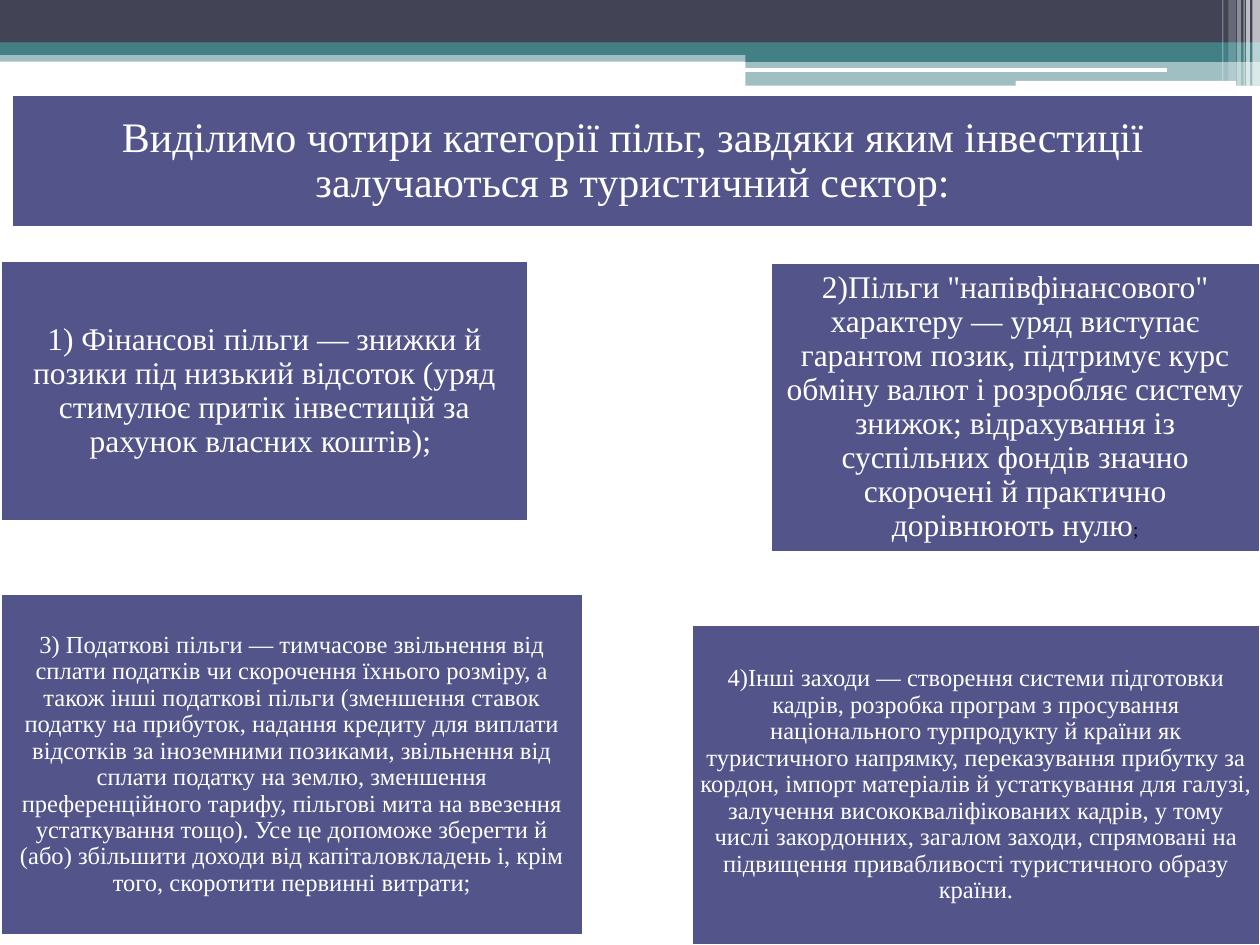
from lxml.etree import SubElement
from pptx import Presentation
from pptx.dml.color import RGBColor
from pptx.enum.shapes import MSO_SHAPE as Shape
from pptx.enum.text import MSO_ANCHOR as Anchor, MSO_AUTO_SIZE as AutoSize, PP_ALIGN as Align
from pptx.oxml.ns import qn
from pptx.util import Pt

COLORS = {"slate": "424456", "teal": "438086", "violet": "53548A",
          "white": "FFFFFF", "black": "000000"}
FONT = "Times New Roman"

# left, top, width, height, colour, opacity in percent
BANDS = [
    (0, 28.8, 720, 6.48, "teal", 50),
    (0, 0, 720, 24.48, "slate", 100),
    (0, 24.2, 720, 7.2, "teal", 100),
    (426, 28.2, 294, 7.2, "teal", 100),
    (426, 34.8, 294, 14.1, "teal", 50),
]
ROUNDED_BARS = [
    (425.6, 39, 241.2, 2.16, "white", 100),
    (580.4, 46.2, 126, 2.88, "white", 100),
]
# left, width, height, opacity in percent
STRIPES = [
    (715.7, 4.3, 49, 65),
    (712.1, 2.16, 49, 65),
    (710.6, 0.72, 49, 60),
    (707, 2.16, 49, 40),
    (702, 4.32, 46.1, 20),
    (698.4, 0.72, 46.1, 30),
]

TITLE = "Виділимо чотири категорії пільг, завдяки яким інвестиції залучаються в туристичний сектор:"
# frame, inset, spans of (text, size, colour)
BENEFITS = [
    ((0.4, 149, 301.4, 149), 5, [
        ("1) Фінансові пільги — знижки й позики під низький відсоток (уряд стимулює "
         "притік інвестицій за рахунок власних коштів); ", 18, "white")]),
    ((440.2, 149.9, 279.8, 165.6), 5, [
        ("2)Пільги \"напівфінансового\" характеру — уряд виступає гарантом позик, підтримує "
         "курс обміну валют і розробляє систему знижок; відрахування із суспільних фондів "
         "значно скорочені й практично дорівнюють нулю", 18, "white"),
        (";", 11, "black")]),
    ((0.2, 339.2, 333.2, 195.1), 4.2, [
        ("3) Податкові пільги — тимчасове звільнення від сплати податків чи скорочення їхнього "
         "розміру, а також інші податкові пільги (зменшення ставок податку на прибуток, надання "
         "кредиту для виплати відсотків за іноземними позиками, звільнення від сплати податку на "
         "землю, зменшення преференційного тарифу, пільгові мита на ввезення устаткування тощо). "
         "Усе це допоможе зберегти й (або) збільшити доходи від капіталовкладень і, крім того, "
         "скоротити первинні витрати;", 14, "white")]),
    ((395.4, 357.1, 324.6, 182.9), 4.2, [
        ("4)Інші заходи — створення системи підготовки кадрів, розробка програм з просування "
         "національного турпродукту й країни як туристичного напрямку, переказування прибутку за "
         "кордон, імпорт матеріалів й устаткування для галузі, залучення висококваліфікованих "
         "кадрів, у тому числі закордонних, загалом заходи, спрямовані на підвищення "
         "привабливості туристичного образу країни.", 14, "white")]),
]


def color(name):
    return RGBColor.from_string(COLORS[name])


def paint(box, fill, opacity=100):
    box.fill.solid()
    box.fill.fore_color.rgb = color(fill)
    if opacity < 100:
        tint = box._element.spPr.find(qn("a:solidFill"))[0]
        SubElement(tint, qn("a:alpha"), val=str(opacity * 1000))


def add_bar(page, kind, left, top, width, height, fill, opacity):
    bar = page.shapes.add_shape(kind, Pt(left), Pt(top), Pt(width), Pt(height))
    bar.shadow.inherit = False
    bar.line.fill.background()
    paint(bar, fill, opacity)


def add_banner(page):
    for band in BANDS:
        add_bar(page, Shape.RECTANGLE, *band)
    for bar in ROUNDED_BARS:
        add_bar(page, Shape.ROUNDED_RECTANGLE, *bar)
    for left, width, height, opacity in STRIPES:
        add_bar(page, Shape.RECTANGLE, left, 0, width, height, "white", opacity)


def format_panel(box, inset, spans):
    """Give a shape or placeholder the violet panel look and its centred text."""
    paint(box, "violet")
    box.line.color.rgb = color("white")
    box.line.width = Pt(1.5)
    frame = box.text_frame
    frame.word_wrap = True
    frame.auto_size = AutoSize.NONE
    frame.vertical_anchor = Anchor.MIDDLE
    frame.margin_left = frame.margin_right = Pt(inset)
    frame.margin_top = frame.margin_bottom = Pt(inset)
    para = frame.paragraphs[0]
    para.alignment = Align.CENTER
    para.line_spacing = 0.9
    for text, size, tone in spans:
        span = para.add_run()
        span.text = text
        span.font.name = FONT
        span.font.size = Pt(size)
        span.font.color.rgb = color(tone)


def add_title(page):
    title = page.shapes.title
    title.left, title.top, title.width, title.height = Pt(6.6), Pt(54), Pt(709.8), Pt(76.2)
    format_panel(title, 7.2, [(TITLE, 24, "white")])


def add_benefit(page, frame, inset, spans):
    box = page.shapes.add_shape(Shape.RECTANGLE, *map(Pt, frame))
    box.shadow.inherit = False
    format_panel(box, inset, spans)


def main():
    deck = Presentation()
    deck.slide_width, deck.slide_height = Pt(720), Pt(540)
    page = deck.slides.add_slide(deck.slide_layouts[5])
    add_banner(page)
    add_title(page)
    for benefit in BENEFITS:
        add_benefit(page, *benefit)
    deck.save("out.pptx")


if __name__ == "__main__":
    main()
